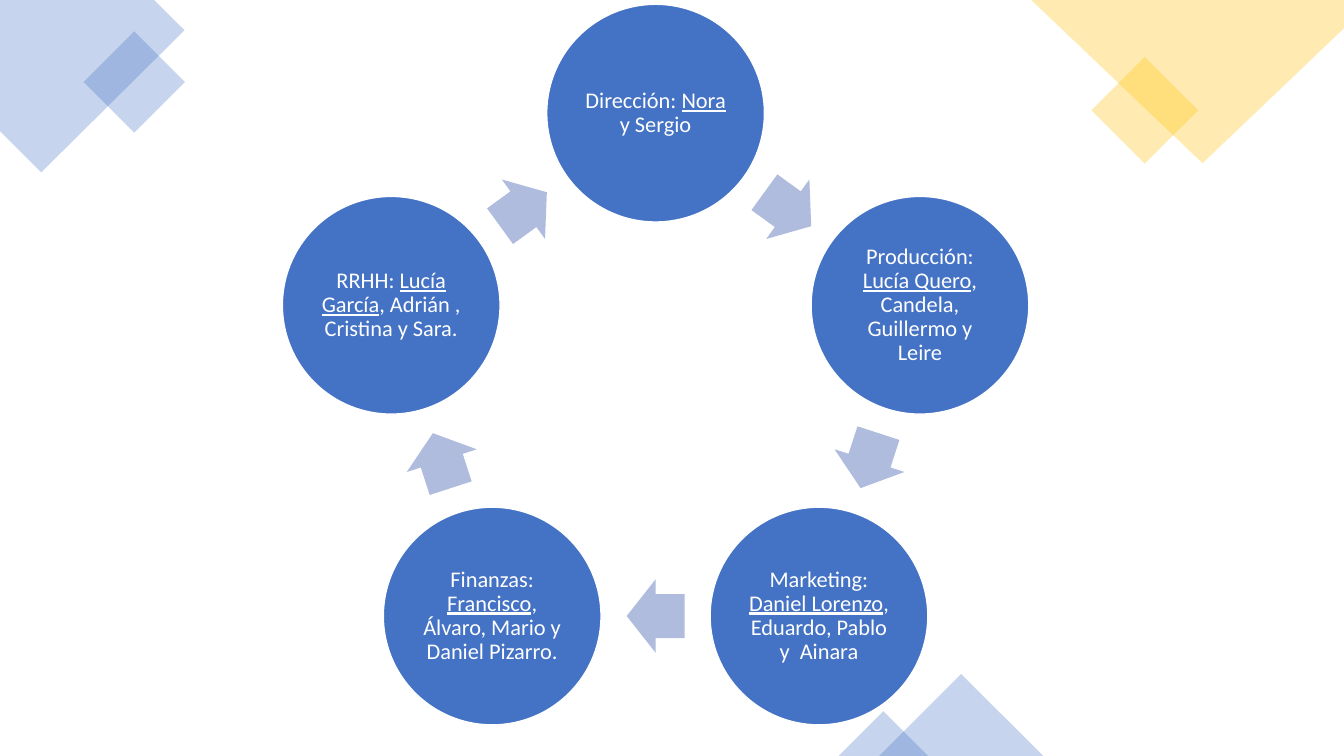
import math

import lxml.etree
import pptx
import pptx.dml.color
import pptx.enum.shapes
import pptx.enum.text
import pptx.oxml.ns
import pptx.util

Pt = pptx.util.Pt
SHAPES = pptx.enum.shapes.MSO_SHAPE
BLUE, GOLD, PALE, WHITE = "4472C4", "FFC000", "B0BCDE", "FFFFFF"

# Each department: heading, coordinator (underlined), rest of the team
DEPARTMENTS = [
    ("Dirección: ", "Nora ", "y Sergio"),
    ("Producción: ", "Lucía Quero", ", Candela, Guillermo y Leire"),
    ("Marketing: ", "Daniel Lorenzo", ", Eduardo, Pablo y  Ainara"),
    ("Finanzas: ", "Francisco", ", Álvaro, Mario y Daniel Pizarro."),
    ("RRHH: ", "Lucía García", ", Adrián , Cristina y Sara."),
]


def color(code):
    return pptx.dml.color.RGBColor.from_string(code)


def paint(shape, fill, line=None, opacity=100):
    """Give a shape its fill, outline and opacity, without shadow."""
    shape.shadow.inherit = False
    shape.fill.solid()
    shape.fill.fore_color.rgb = color(fill)
    if line:
        shape.line.color.rgb = color(line)
        shape.line.width = Pt(1)
    else:
        shape.line.fill.background()
    if opacity < 100:
        qn = pptx.oxml.ns.qn
        fill_color = shape.element.spPr.find(qn("a:solidFill")).find(qn("a:srgbClr"))
        lxml.etree.SubElement(fill_color, qn("a:alpha")).set("val", str(opacity * 1000))


def add_preset(page, kind, box, fill, rotation=0, **look):
    shape = page.shapes.add_shape(kind, *(Pt(length) for length in box))
    shape.rotation = rotation
    paint(shape, fill, **look)
    return shape


def add_outline(page, points, fill):
    corners = [(Pt(x), Pt(y)) for x, y in points]
    builder = page.shapes.build_freeform(*corners[0])
    builder.add_line_segments(corners[1:], close=True)
    paint(builder.convert_to_shape(), fill, opacity=30)


def write_text(shape, spans, size=16, font="Calibri", fill=WHITE, inset=1.6):
    """Write (text, underlined) spans as one centred paragraph."""
    frame = shape.text_frame
    frame.word_wrap = True
    frame.vertical_anchor = pptx.enum.text.MSO_ANCHOR.MIDDLE
    frame.margin_left = frame.margin_right = Pt(inset)
    frame.margin_top = frame.margin_bottom = Pt(inset)
    para = frame.paragraphs[0]
    para.alignment = pptx.enum.text.PP_ALIGN.CENTER
    para.line_spacing = 0.9
    for text, underlined in spans:
        span = para.add_run()
        span.text = text
        span.font.size = Pt(size)
        span.font.name = font
        span.font.color.rgb = color(fill)
        span.font.underline = underlined


def add_corners(page, width, height):
    """Translucent squares cut off by the slide edges."""
    # Top left
    add_outline(page, [(0, 0), (110.2, 0), (131.8, 21.6), (29.5, 123.1), (0, 93.6)], BLUE)
    add_preset(page, SHAPES.RECTANGLE, (70.4, 33, 51.1, 51.1), BLUE, 315, opacity=30)
    # Top right
    add_preset(page, SHAPES.RECTANGLE, (790.7, 51.8, 54, 54), GOLD, 315, opacity=30)
    add_outline(page, [(width, 0), (width - 223.4, 0), (width - 101, 116.6),
                       (width, 20.2)], GOLD)
    # Bottom edge
    for left, base in ((628, 117.2), (599, 64)):
        box = (left, height - base / 2, base, base / 2)
        add_preset(page, SHAPES.ISOSCELES_TRIANGLE, box, BLUE, opacity=30)


def add_cycle(page, box):
    """Ring of department circles, joined clockwise by arrows."""
    left, top, width, height = box
    diameter = 155.5
    step = 2 * math.pi / len(DEPARTMENTS)
    radius = (height - diameter) / (1 + math.cos(step / 2))
    center_x, center_y = left + width / 2, top + diameter / 2 + radius
    arrow_radius, arrow_width, arrow_height = 160.6, 41.3, 52.5

    def box_at(angle, distance, wide, high):
        x = center_x + distance * math.sin(angle)
        y = center_y - distance * math.cos(angle)
        return x - wide / 2, y - high / 2, wide, high

    for index, (heading, lead, team) in enumerate(DEPARTMENTS):
        angle = index * step
        circle = add_preset(page, SHAPES.OVAL, box_at(angle, radius, diameter, diameter),
                            BLUE, line=WHITE)
        write_text(circle, [(heading, False), (lead, True), (team, False)])
        middle = angle + step / 2
        arrow = add_preset(page, SHAPES.RIGHT_ARROW,
                           box_at(middle, arrow_radius, arrow_width, arrow_height),
                           PALE, math.degrees(middle))
        arrow.adjustments[0] = 0.6
        arrow.adjustments[1] = 0.5


def main():
    deck = pptx.Presentation()
    deck.slide_width, deck.slide_height = Pt(960), Pt(540)
    page = deck.slides.add_slide(deck.slide_layouts[6])
    add_corners(page, 960, 540)
    add_cycle(page, (201.8, 3.1, 533, 514.7))
    deck.save("out.pptx")


if __name__ == "__main__":
    main()
